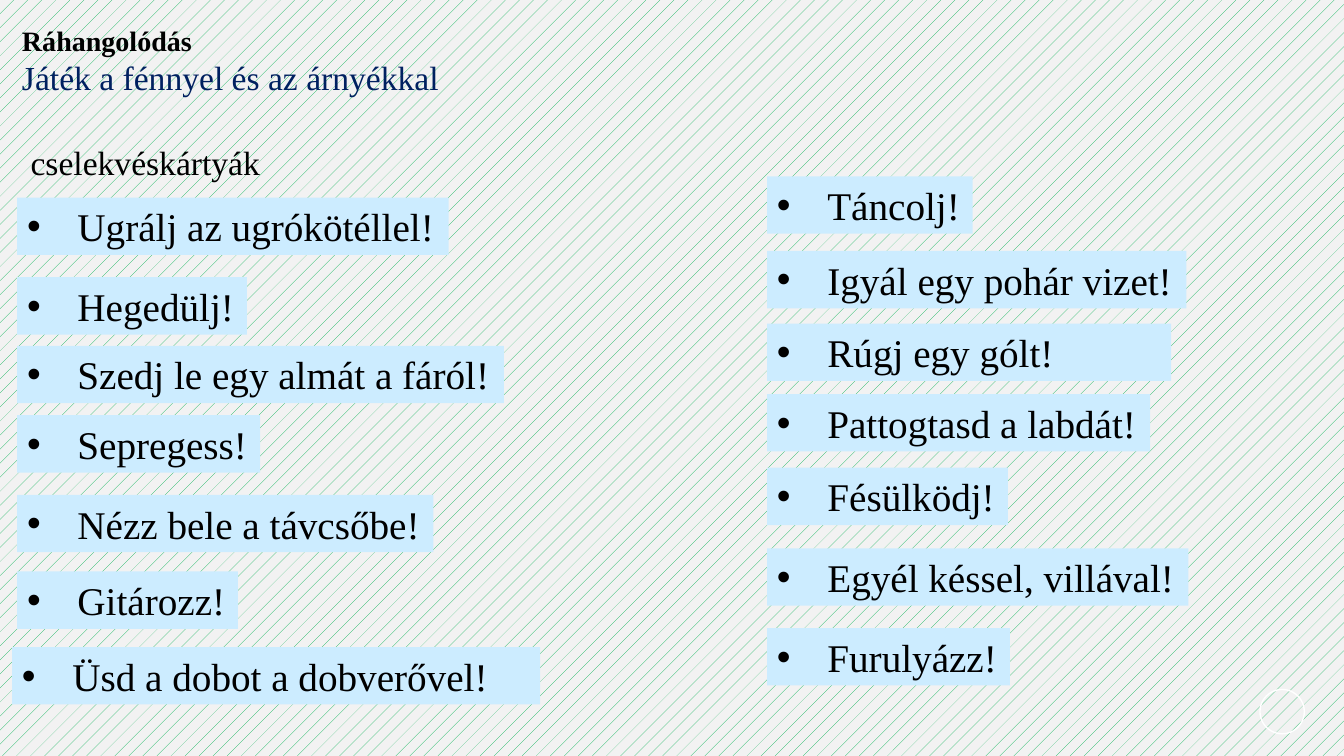
from lxml import etree
from pptx import Presentation
from pptx.dml.color import RGBColor
from pptx.enum.dml import MSO_PATTERN
from pptx.enum.shapes import MSO_SHAPE
from pptx.enum.text import MSO_AUTO_SIZE
from pptx.oxml.ns import qn
from pptx.util import Pt

DOTS = MSO_PATTERN.PERCENT_5
OVAL = MSO_SHAPE.OVAL
GROW = MSO_AUTO_SIZE.SHAPE_TO_FIT_TEXT
BLACK = "000000"
CARD_BLUE = "CCECFF"
CARD_HEIGHT = 41
BULLET_INDENT = 36


def color(hex_code):
    return RGBColor.from_string(hex_code)


def add_text(left, top, width, height, lines, wrap):
    """Add a text box; each line is (text, size, colour, bold)."""
    box = slide.shapes.add_textbox(Pt(left), Pt(top), Pt(width), Pt(height))
    frame = box.text_frame
    frame.word_wrap = wrap
    frame.auto_size = GROW
    frame.text = "\n".join(line[0] for line in lines)
    for paragraph, (_, size, hex_code, bold) in zip(frame.paragraphs, lines):
        font = paragraph.runs[0].font
        font.name = "Times New Roman"
        font.size = Pt(size)
        font.bold = bold
        font.color.rgb = color(hex_code)
    return box


prs = Presentation()
prs.slide_width = Pt(960)
prs.slide_height = Pt(540)
slide = prs.slides.add_slide(prs.slide_layouts[6])

backdrop = slide.background.fill
backdrop.patterned()
backdrop.pattern = DOTS
backdrop.fore_color.rgb = color("00B050")
backdrop.back_color.rgb = color("F2F2F2")

ring = slide.shapes.add_shape(OVAL, Pt(900), Pt(492.5), Pt(31.7), Pt(31.7))
ring.shadow.inherit = False
ring.fill.background()
ring.line.color.rgb = color("FFFFFF")
ring.line.width = Pt(1)

add_text(8.64, 13, 460.8, 60.5, [
    ("Ráhangolódás", 20, BLACK, True),
    ("Játék a fénnyel és az árnyékkal", 24, "002060", False),
], True)
subtitle = add_text(8.64, 97.9, 185.8, 36,
                    [("cselekvéskártyák", 24, BLACK, False)], False)
subtitle.text_frame.margin_left = Pt(13.2)

# Action cards: left, top, width, text, wrap
LEFT, RIGHT = 12.24, 547.9
cards = [
    (LEFT, 141.1, 308.2, "Ugrálj az ugrókötéllel!", False),
    (LEFT, 198, 164.2, "Hegedülj!", False),
    (LEFT, 247, 347.8, "Szedj le egy almát a fáról!", False),
    (LEFT, 296.6, 173.5, "Sepregess!", False),
    (LEFT, 353.5, 297.4, "Nézz bele a távcsőbe!", False),
    (LEFT, 408.2, 157.7, "Gitározz!", False),
    (8.64, 462.2, 377.3, "Üsd a dobot a dobverővel!", True),
    (RIGHT, 126, 146.9, "Táncolj!", False),
    (RIGHT, 179.3, 299.5, "Igyál egy pohár vizet!", False),
    (RIGHT, 231.1, 288.7, "Rúgj egy gólt!", True),
    (RIGHT, 281.5, 273.6, "Pattogtasd a labdát!", False),
    (RIGHT, 334.1, 172.1, "Fésülködj!", False),
    (RIGHT, 391.7, 301, "Egyél késsel, villával!", False),
    (RIGHT, 448.6, 173.5, "Furulyázz!", False),
]
for left, top, width, action, wrap in cards:
    card = add_text(left, top, width, CARD_HEIGHT,
                    [(action, 28, BLACK, False)], wrap)
    card.fill.solid()
    card.fill.fore_color.rgb = color(CARD_BLUE)
    props = card.text_frame.paragraphs[0]._p.get_or_add_pPr()
    props.set("marL", str(Pt(BULLET_INDENT)))
    props.set("indent", str(-Pt(BULLET_INDENT)))
    etree.SubElement(props, qn("a:buFont"), typeface="Arial")
    etree.SubElement(props, qn("a:buChar"), char="•")

prs.save("out.pptx")
